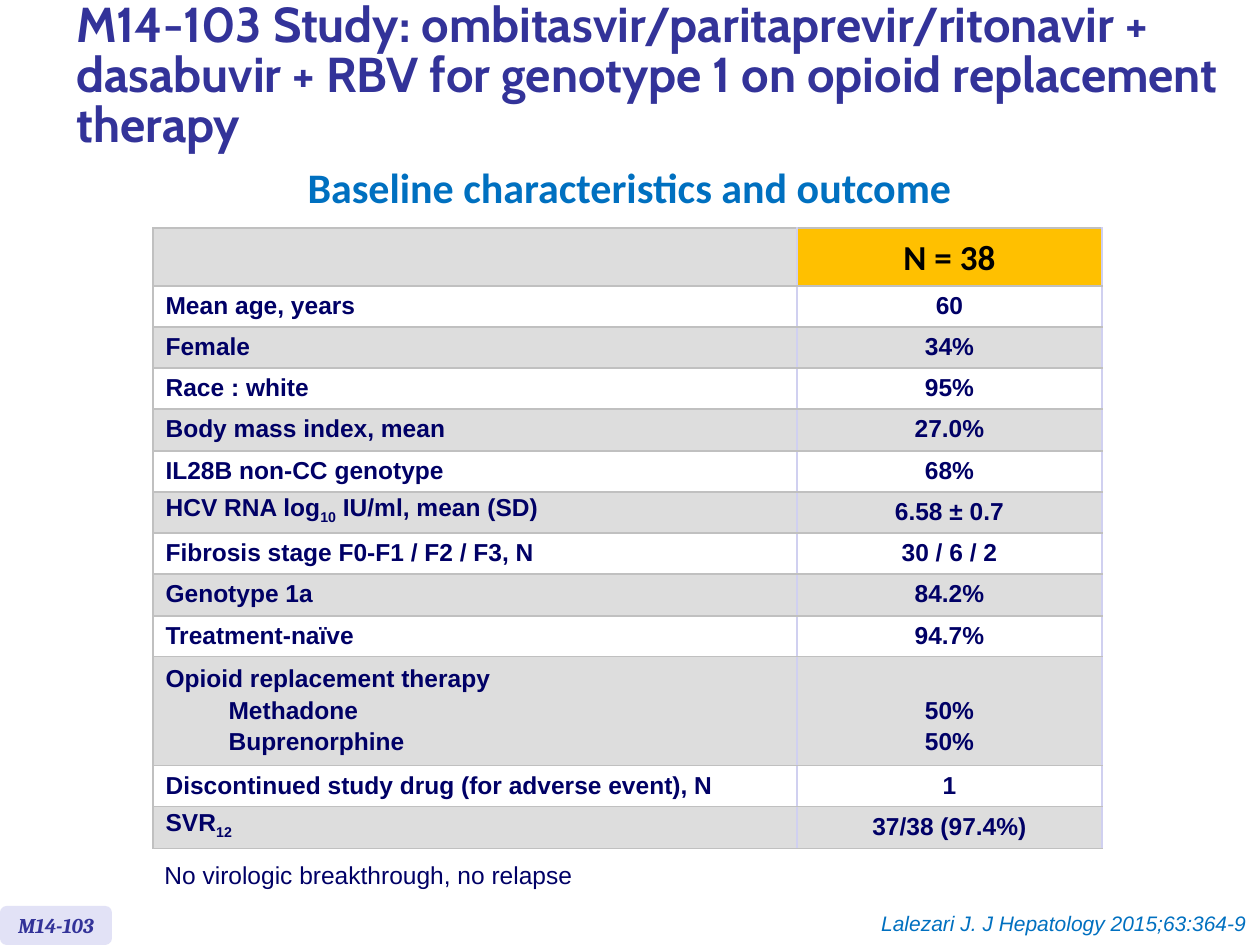
from dataclasses import dataclass

from lxml.etree import SubElement
from pptx import Presentation
from pptx.dml.color import RGBColor
from pptx.enum.shapes import MSO_SHAPE
from pptx.enum.text import MSO_ANCHOR, MSO_AUTO_SIZE, PP_ALIGN
from pptx.oxml.ns import qn
from pptx.util import Pt

EMU_PER_PX = 914400 / 126


def px(length):
    return round(length * EMU_PER_PX)


@dataclass(frozen=True)
class TextStyle:
    name: str
    size: int
    color: str
    bold: bool = False
    italic: bool = False


@dataclass(frozen=True)
class Theme:
    title = TextStyle("Cabin", 28, "333399", bold=True)
    subtitle = TextStyle("Calibri", 24, "0070C0", bold=True)
    header = TextStyle("Calibri", 20, "000000", bold=True)
    body = TextStyle("Arial", 14, "000066", bold=True)
    note = TextStyle("Arial", 14, "000066")
    badge = TextStyle("Cambria", 12, "333399", bold=True, italic=True)
    citation = TextStyle("Arial", 12, "0070C0", italic=True)
    header_fill = "FFC000"
    row_fills = ("DDDDDD", "FFFFFF")
    badge_fill = "E2E2F6"
    rule = "C0C0C0"
    side_rule = "D0D0F0"
    table_leading = Pt(15)
    paragraph_gap = Pt(2.8)


class SlideBuilder:
    def __init__(self, slide, theme):
        self.slide = slide
        self.theme = theme

    def fill_paragraph(self, paragraph, text, style, align=PP_ALIGN.LEFT, leading=None):
        paragraph.alignment = align
        paragraph.line_spacing = leading
        font = paragraph.font
        font.name, font.size = style.name, Pt(style.size)
        font.bold, font.italic = style.bold, style.italic
        font.color.rgb = RGBColor.from_string(style.color)
        for index, part in enumerate(text.split("|")):
            if part:
                run = paragraph.add_run()
                run.text = part
                if index % 2:
                    run.font._element.set("baseline", "-25000")

    def title(self, text, left, top, width, height):
        shape = self.slide.shapes.title
        shape.left, shape.top, shape.width, shape.height = map(px, (left, top, width, height))
        frame = shape.text_frame
        frame.word_wrap = True
        frame.auto_size = MSO_AUTO_SIZE.NONE
        frame.vertical_anchor = MSO_ANCHOR.MIDDLE
        self.fill_paragraph(frame.paragraphs[0], text, self.theme.title, leading=0.85)

    def text(self, text, left, top, width, height, style, align=PP_ALIGN.LEFT,
             anchor=MSO_ANCHOR.TOP, leading=None, inset=6):
        shape = self.slide.shapes.add_textbox(*map(px, (left, top, width, height)))
        frame = shape.text_frame
        frame.word_wrap = False
        frame.auto_size = MSO_AUTO_SIZE.SHAPE_TO_FIT_TEXT
        frame.vertical_anchor = anchor
        frame.margin_top = frame.margin_bottom = px(inset)
        self.fill_paragraph(frame.paragraphs[0], text, style, align, leading)

    def badge(self, text, left, top, width, height):
        shape = self.slide.shapes.add_shape(
            MSO_SHAPE.ROUNDED_RECTANGLE, *map(px, (left, top, width, height)))
        shape.shadow.inherit = False
        shape.fill.solid()
        shape.fill.fore_color.rgb = RGBColor.from_string(self.theme.badge_fill)
        shape.line.fill.background()
        frame = shape.text_frame
        frame.word_wrap = False
        frame.vertical_anchor = MSO_ANCHOR.MIDDLE
        self.fill_paragraph(frame.paragraphs[0], text, self.theme.badge, PP_ALIGN.CENTER)

    def borders(self, cell, colors):
        properties = cell._tc.get_or_add_tcPr()
        for side, color in zip("LRTB", colors):
            line = SubElement(properties, qn(f"a:ln{side}"), w=str(Pt(1)))
            fill = SubElement(line, qn("a:solidFill"))
            SubElement(fill, qn("a:srgbClr"), val=color)

    def cell(self, cell, lines, style, fill, is_label):
        theme = self.theme
        self.borders(cell, (theme.rule if is_label else theme.side_rule,
                            theme.side_rule, theme.rule, theme.rule))
        cell.fill.solid()
        cell.fill.fore_color.rgb = RGBColor.from_string(fill)
        cell.vertical_anchor = MSO_ANCHOR.MIDDLE
        frame = cell.text_frame
        for index, line in enumerate(lines):
            paragraph = frame.add_paragraph() if index else frame.paragraphs[0]
            if index:
                paragraph.space_before = theme.paragraph_gap
            if is_label and index:
                paragraph.level = 1
                paragraph._p.get_or_add_pPr().set("marL", str(px(63)))
            self.fill_paragraph(paragraph, line, style,
                                PP_ALIGN.LEFT if is_label else PP_ALIGN.CENTER,
                                theme.table_leading)

    def table(self, rows, left, top, widths, heights):
        theme = self.theme
        frame = self.slide.shapes.add_table(
            len(rows), len(widths), *map(px, (left, top, sum(widths), sum(heights))))
        table = frame.table
        for column, width in zip(table.columns, widths):
            column.width = px(width)
        for row_index, (row, height) in enumerate(zip(rows, heights)):
            table.rows[row_index].height = px(height)
            for column_index, lines in enumerate(row):
                is_label = column_index == 0
                is_header = row_index == 0
                fill = theme.row_fills[row_index % 2]
                if is_header and not is_label:
                    fill = theme.header_fill
                cell = table.cell(row_index, column_index)
                style = theme.header if is_header else theme.body
                self.cell(cell, lines, style, fill, is_label)
                if is_header:
                    cell.vertical_anchor = MSO_ANCHOR.BOTTOM
                elif len(lines) < len(row[0]):
                    cell.vertical_anchor = MSO_ANCHOR.BOTTOM
                    cell.margin_bottom = px(10)


ROWS = [
    ([""], ["N = 38"]),
    (["Mean age, years"], ["60"]),
    (["Female"], ["34%"]),
    (["Race : white"], ["95%"]),
    (["Body mass index, mean"], ["27.0%"]),
    (["IL28B non-CC genotype"], ["68%"]),
    (["HCV RNA log|10| IU/ml, mean (SD)"], ["6.58 ± 0.7"]),
    (["Fibrosis stage F0-F1 / F2 / F3, N"], ["30 / 6 / 2"]),
    (["Genotype 1a"], ["84.2%"]),
    (["Treatment-naïve"], ["94.7%"]),
    (["Opioid replacement therapy", "Methadone", "Buprenorphine"], ["50%", "50%"]),
    (["Discontinued study drug (for adverse event), N"], ["1"]),
    (["SVR|12|"], ["37/38 (97.4%)"]),
]


def row_heights(header=58, therapy=109, single_total=454):
    count = len(ROWS) - 2
    heights = [single_total * (index + 1) // count - single_total * index // count
               for index in range(count)]
    return [header, *heights[:9], therapy, *heights[9:]]


def main():
    presentation = Presentation()
    presentation.slide_width, presentation.slide_height = px(1260), px(945)
    theme = Theme()
    builder = SlideBuilder(
        presentation.slides.add_slide(presentation.slide_layouts[5]), theme)
    builder.title("M14-103 Study: ombitasvir/paritaprevir/ritonavir + dasabuvir + RBV "
                  "for genotype 1 on opioid replacement therapy", 64, 10, 1194, 135)
    builder.table(ROWS, 153, 228, (644, 305), row_heights())
    builder.text("No virologic breakthrough, no relapse", 152, 854, 437, 43, theme.note)
    builder.text("Baseline characteristics and outcome", 291, 173, 677, 52, theme.subtitle,
                 PP_ALIGN.CENTER, MSO_ANCHOR.MIDDLE, Pt(15.2), 10)
    builder.badge("M14-103", 0, 906, 112, 39)
    builder.text("Lalezari J. J Hepatology 2015;63:364-9", 859, 905, 400, 38,
                 theme.citation, PP_ALIGN.RIGHT)
    presentation.save("out.pptx")


if __name__ == "__main__":
    main()
